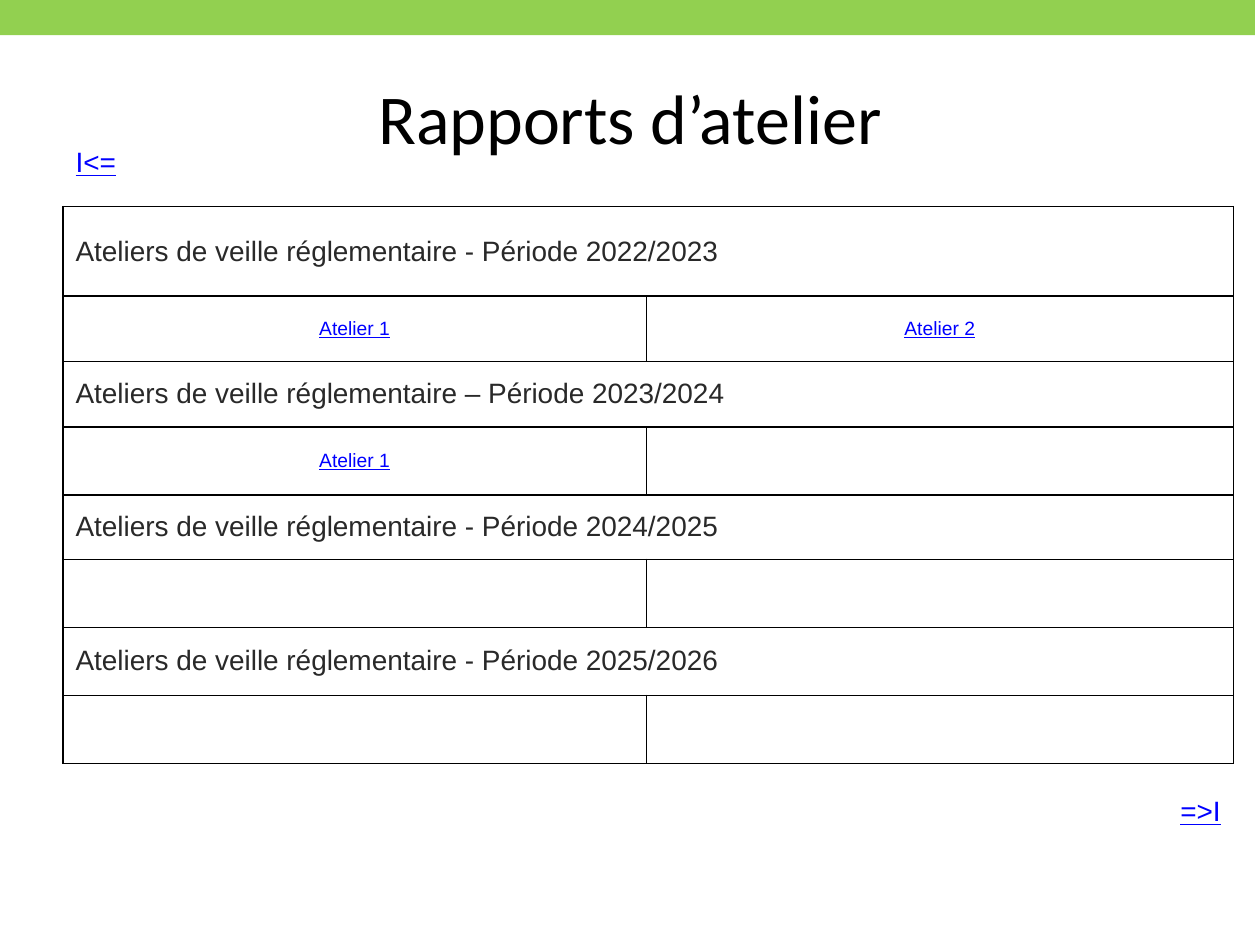
from lxml.etree import SubElement
from pptx import Presentation
from pptx.dml.color import RGBColor
from pptx.enum.shapes import MSO_SHAPE
from pptx.enum.text import MSO_ANCHOR, PP_ALIGN
from pptx.oxml.ns import qn
from pptx.util import Inches, Pt

NO_STYLE = "{2D5ABB26-0587-4C30-8999-92F81FD0307C}"
BLACK, GREEN, GREY, BLUE = "000000", "92D050", "292929", "0000FF"
COLUMNS = [1.32, 0.54, 0.78, 1.6, 0.13, 0.26, 2, 0.54, 0.79, 1.33]
ROWS = [0.7, 0.71, 0.52, 0.52, 0.54, 0.51, 0.54, 0.54, 0.54, 0.77]
PERIODS = [
    ("Ateliers de veille réglementaire - Période 2022/2023", "Atelier 1", "Atelier 2"),
    ("Ateliers de veille réglementaire – Période 2023/2024", "Atelier 1", ""),
    ("Ateliers de veille réglementaire - Période 2024/2025", "", ""),
    ("Ateliers de veille réglementaire - Période 2025/2026", "", ""),
]


def color(value):
    return RGBColor.from_string(value)


class Page:
    """Holds the style and the current slide."""

    def __init__(self, deck, font="Arial"):
        self.slide = deck.slides.add_slide(deck.slide_layouts[6])
        self.font = font

    def set_text(self, frame, text, size, ink, align=PP_ALIGN.LEFT, font=None, underline=False):
        para = frame.paragraphs[0]
        para.text = text
        para.alignment = align
        para.font.name = font or self.font
        para.font.size = Pt(size)
        para.font.color.rgb = color(ink)
        para.font.underline = underline

    def band(self, left, top, width, height, fill):
        shape = self.slide.shapes.add_shape(
            MSO_SHAPE.RECTANGLE, Inches(left), Inches(top), Inches(width), Inches(height))
        shape.shadow.inherit = False
        shape.fill.solid()
        shape.fill.fore_color.rgb = color(fill)
        shape.line.fill.background()

    def title(self, left, top, width, height, text):
        box = self.slide.shapes.add_textbox(
            Inches(left), Inches(top), Inches(width), Inches(height))
        box.text_frame.word_wrap = True
        box.text_frame.vertical_anchor = MSO_ANCHOR.MIDDLE
        self.set_text(box.text_frame, text, 40, BLACK, PP_ALIGN.CENTER, "Calibri")

    def table(self, left, top, columns, rows):
        frame = self.slide.shapes.add_table(
            len(rows), len(columns), Inches(left), Inches(top),
            Inches(sum(columns)), Inches(sum(rows)))
        table = frame.table
        table.first_row = table.horz_banding = False
        table._tbl.tblPr.find(qn("a:tableStyleId")).text = NO_STYLE
        for column, width in zip(table.columns, columns):
            column.width = Inches(width)
        for row, height in zip(table.rows, rows):
            row.height = Inches(height)
        return table

    def cell(self, table, row, first, last, sides, text="", **style):
        """Merge columns first to last of a row, rule its sides and fill in the text."""
        cell = table.cell(row, first)
        if last > first:
            cell.merge(table.cell(row, last))
        properties = cell._tc.get_or_add_tcPr()
        for side in sides:
            line = SubElement(properties, qn(f"a:ln{side}"), w=str(Pt(1)))
            fill = SubElement(line, qn("a:solidFill"))
            SubElement(fill, qn("a:srgbClr"), val=BLACK)
        cell.fill.background()
        cell.vertical_anchor = MSO_ANCHOR.MIDDLE
        if text:
            self.set_text(cell.text_frame, text, **style)


def main():
    deck = Presentation()
    deck.slide_width, deck.slide_height = Inches(10), Inches(7.5)
    page = Page(deck)

    # Top band and title
    page.band(0, 0, 9.96, 0.28, GREEN)
    page.title(0.5, 0.3, 9, 1.25, "Rapports d’atelier")

    table = page.table(0.5, 0.94, COLUMNS, ROWS)
    arrow = dict(size=16, ink=BLUE, underline=True)
    workshop = dict(size=11, ink=BLUE, align=PP_ALIGN.CENTER, underline=True)

    # Row with the back mark
    page.cell(table, 0, 0, 0, "B", "I<=", **arrow)
    for first, last in [(1, 2), (3, 4), (5, 6), (7, 8), (9, 9)]:
        page.cell(table, 0, first, last, "B")

    # Two rows for each period: heading, then its workshops
    for index, (heading, left, right) in enumerate(PERIODS):
        row = 1 + 2 * index
        page.cell(table, row, 0, 9, "LRTB", heading, size=16, ink=GREY)
        page.cell(table, row + 1, 0, 5, "LRTB", left, **workshop)
        page.cell(table, row + 1, 6, 9, "LRTB", right, **workshop)

    # Row with the forward mark
    for first, last in [(0, 0), (1, 1), (2, 3), (4, 7), (8, 8)]:
        page.cell(table, 9, first, last, "T")
    page.cell(table, 9, 9, 9, "T", "=>I", align=PP_ALIGN.RIGHT, **arrow)

    deck.save("out.pptx")


if __name__ == "__main__":
    main()
